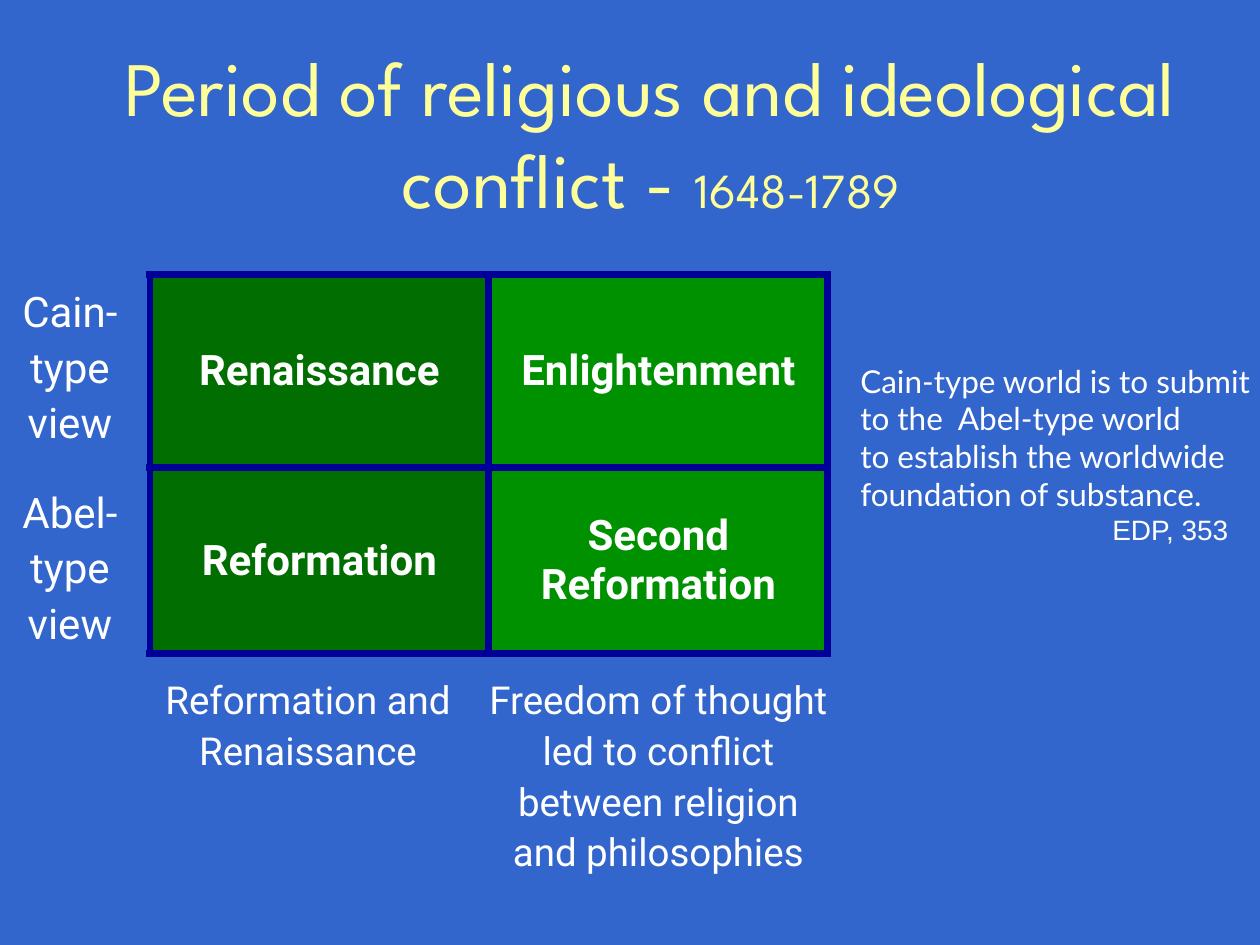
"""Build a slide with a two-by-two table of religious and ideological currents."""
from lxml import etree
from pptx import Presentation
from pptx import util as u
from pptx.dml.color import RGBColor
from pptx.enum import text
from pptx.oxml import ns

COLORS = {"background": "3366CC", "title": "FFFF99", "body": "FFFFFF",
          "border": "000099", "early": "006E00", "late": "009100"}
COLUMNS, ROWS = 100, 75
CENTER, LEFT = text.PP_ALIGN.CENTER, text.PP_ALIGN.LEFT


def rgb(name):
    return RGBColor.from_string(COLORS[name])


def style(target, formats):
    for key, value in formats.items():
        setattr(target, key, value)


class Board:
    """Hold the style and the current slide, measured in grid columns and rows."""

    def __init__(self, deck):
        style(deck, {"slide_width": u.Inches(10), "slide_height": u.Inches(7.5)})
        self.column = deck.slide_width / COLUMNS
        self.row = deck.slide_height / ROWS
        self.slide = deck.slides.add_slide(deck.slide_layouts[6])
        self.slide.background.fill.solid()
        self.slide.background.fill.fore_color.rgb = rgb("background")

    def place(self, left, top, width, height):
        return [round(n * unit) for n, unit in
                zip((left, top, width, height), (self.column, self.row) * 2)]

    def add_words(self, paragraph, wording, size, font="Roboto", color="body", bold=False):
        run = paragraph.add_run()
        run.text = wording
        style(run.font, {"size": u.Pt(size), "name": font, "bold": bold})
        run.font.color.rgb = rgb(color)

    def text_box(self, at, lines, align=CENTER, spacing=1.0, **frame_formats):
        frame = self.slide.shapes.add_textbox(*self.place(*at)).text_frame
        style(frame, {"word_wrap": True, **frame_formats})
        for index, runs in enumerate(lines):
            paragraph = frame.add_paragraph() if index else frame.paragraphs[0]
            style(paragraph, {"alignment": align, "line_spacing": spacing})
            for run in runs:
                self.add_words(paragraph, **run)
        return frame

    def label(self, at, wording, size):
        self.text_box(at, [[{"wording": wording, "size": size}]], spacing=1.1)

    def indent(self, paragraph, columns):
        paragraph._p.get_or_add_pPr().set("marL", str(round(columns * self.column)))

    def border(self, cell, color, width):
        properties = cell._tc.get_or_add_tcPr()
        for index, side in enumerate(("lnL", "lnR", "lnT", "lnB")):
            line = etree.Element(ns.qn(f"a:{side}"), w=str(u.Pt(width)))
            fill = etree.SubElement(line, ns.qn("a:solidFill"))
            etree.SubElement(fill, ns.qn("a:srgbClr"), val=COLORS[color])
            properties.insert(index, line)

    def table(self, at, words, heights, fills):
        grid = self.slide.shapes.add_table(
            len(words), len(fills), *self.place(*at)).table
        style(grid, {"first_row": False, "horz_banding": False})
        for grid_row, height, row_words in zip(grid.rows, heights, words):
            grid_row.height = round(height * self.row)
            for cell, wording, fill in zip(grid_row.cells, row_words, fills):
                cell.vertical_anchor = text.MSO_ANCHOR.MIDDLE
                cell.fill.solid()
                cell.fill.fore_color.rgb = rgb(fill)
                self.border(cell, "border", 4.5)
                paragraph = cell.text_frame.paragraphs[0]
                paragraph.alignment = CENTER
                self.add_words(paragraph, wording, 24, bold=True)


def main():
    deck = Presentation()
    board = Board(deck)

    title = {"font": "League Spartan", "color": "title"}
    board.text_box((5.8, 4.2, 91.7, 12.5), [[
        {"wording": "Period of religious and ideological conflict - ", "size": 44, **title},
        {"wording": "1648-1789", "size": 28, **title}]],
        vertical_anchor=text.MSO_ANCHOR.MIDDLE)

    board.table((11.9, 21.8, 53.8, 30.1),
                [["Renaissance", "Enlightenment"],
                 ["Reformation", "Second Reformation"]],
                heights=(15.3, 14.8), fills=("early", "late"))

    for index, view in enumerate(("Cain-type view", "Abel-type view")):
        board.label((0, 21.8 + index * 15.9, 11.1, 14.2), view, 24)

    for left, width, height, cause in (
            (10.1, 28.7, 9.1, "Reformation and Renaissance"),
            (37.8, 28.9, 17.1, "Freedom of thought led to conflict "
                               "between religion and philosophies")):
        board.label((left, 52.8, width, height), cause, 22)

    quote = ("Cain-type world is to submit", "to the  Abel-type world",
             "to establish the worldwide", "foundation of substance.")
    lines = [[{"wording": line, "size": 18, "font": "Lato"}] for line in quote]
    citation = [{"wording": "EDP, 353", "size": 16, "font": "Arial"}]
    remark = board.text_box((67.3, 28.2, 33.3, 15.8), lines + [citation],
                            align=LEFT, word_wrap=False)
    board.indent(remark.paragraphs[-1], 20)

    deck.save("out.pptx")


if __name__ == "__main__":
    main()
